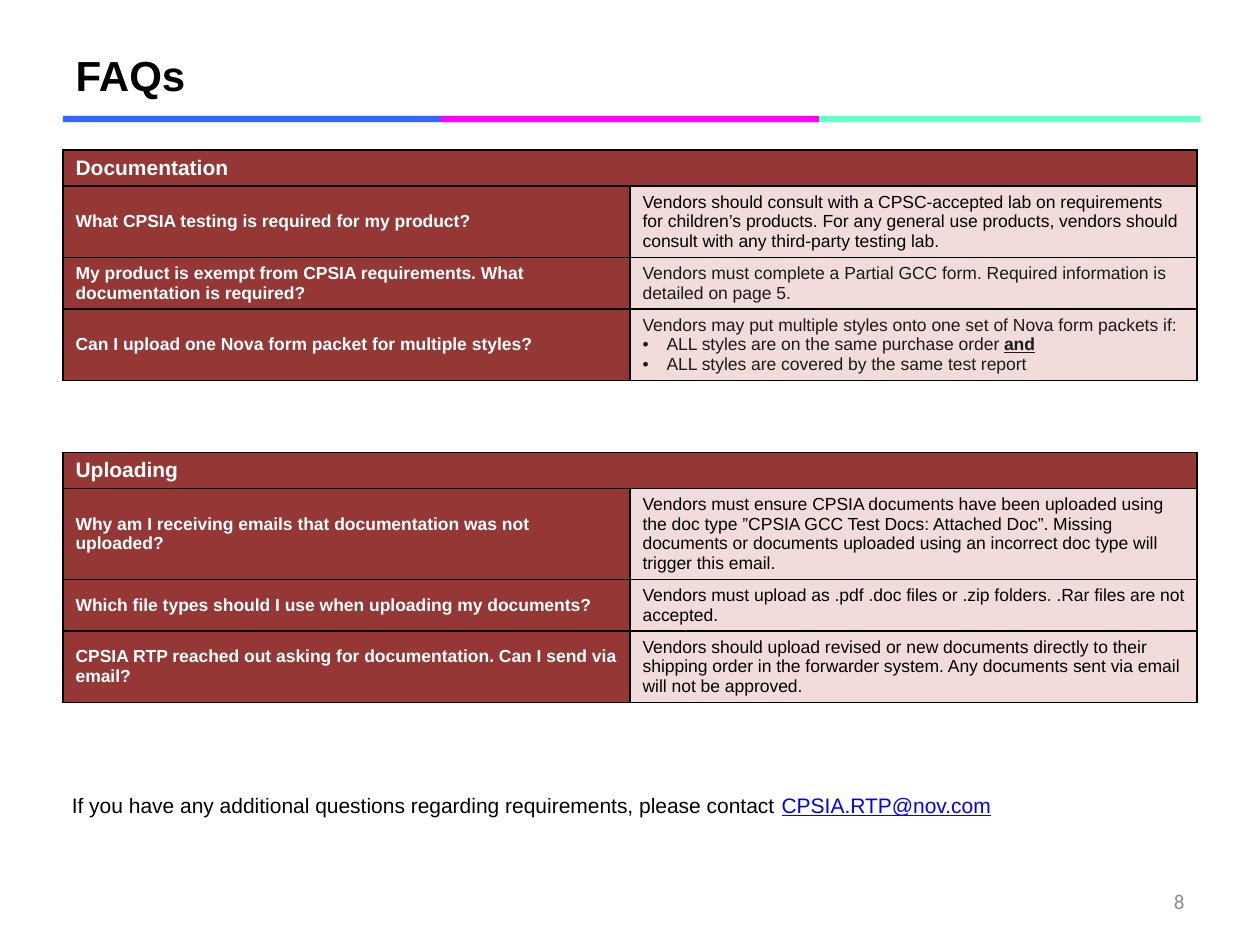
from lxml import etree
from pptx import Presentation
from pptx.dml.color import RGBColor
from pptx.enum.shapes import MSO_SHAPE
from pptx.enum.text import MSO_ANCHOR, MSO_AUTO_SIZE, PP_ALIGN
from pptx.oxml.ns import qn
from pptx.util import Inches, Pt

RECTANGLE = MSO_SHAPE.RECTANGLE
MIDDLE, TOP = MSO_ANCHOR.MIDDLE, MSO_ANCHOR.TOP
LEFT, RIGHT = PP_ALIGN.LEFT, PP_ALIGN.RIGHT
NO_AUTOFIT = MSO_AUTO_SIZE.NONE

BLACK = RGBColor(0x00, 0x00, 0x00)
WHITE = RGBColor(0xFF, 0xFF, 0xFF)
CHARCOAL = RGBColor(0x1A, 0x1A, 0x1A)
GREY = RGBColor(0x8C, 0x8C, 0x8C)
BLUE = RGBColor(0x33, 0x66, 0xFF)
MAGENTA = RGBColor(0xFF, 0x00, 0xFF)
MINT = RGBColor(0x66, 0xFF, 0xCC)
LINK_BLUE = RGBColor(0x00, 0x00, 0xFF)
MAROON = RGBColor(0x95, 0x37, 0x35)
BLUSH = RGBColor(0xF2, 0xDC, 0xDB)

MARGIN = 0.5
BULLET_INDENT = 0.19

DOCUMENTATION = [
    ("What CPSIA testing is required for my product?", BLACK, 0.56,
     ["Vendors should consult with a CPSC-accepted lab on requirements for children’s products. "
      "For any general use products, vendors should consult with any third-party testing lab."]),
    ("My product is exempt from CPSIA requirements. What documentation is required?", CHARCOAL, 0.41,
     ["Vendors must complete a Partial GCC form. Required information is detailed on page 5."]),
    ("Can I upload one Nova form packet for multiple styles?", CHARCOAL, 0.56,
     ["Vendors may put multiple styles onto one set of Nova form packets if:",
      "• ALL styles are on the same purchase order |and",
      "• ALL styles are covered by the same test report"]),
]
UPLOADING = [
    ("Why am I receiving emails that documentation was not uploaded?", BLACK, 0.71,
     ["Vendors must ensure CPSIA documents have been uploaded using the doc type "
      "”CPSIA GCC Test Docs: Attached Doc”. Missing documents or documents uploaded using "
      "an incorrect doc type will trigger this email."]),
    ("Which file types should I use when uploading my documents?", BLACK, 0.41,
     ["Vendors must upload as .pdf .doc files or .zip folders. .Rar files are not accepted."]),
    ("CPSIA RTP reached out asking for documentation. Can I send via email?", BLACK, 0.56,
     ["Vendors should upload revised or new documents directly to their shipping order in the "
      "forwarder system. Any documents sent via email will not be approved."]),
]


class FaqSlide:
    font = "Arial"
    header_height = 0.28
    column_width = 4.5

    def __init__(self, slide):
        self.slide = slide

    def run(self, paragraph, text, size, color, **formats):
        run = paragraph.add_run()
        run.text = text
        run.font.color.rgb = color
        values = {"name": self.font, "size": Pt(size), "bold": False, **formats}
        for attribute, value in values.items():
            setattr(run.font, attribute, value)

    def place(self, shape, left, top, width, height):
        for attribute, value in zip(("left", "top", "width", "height"), (left, top, width, height)):
            setattr(shape, attribute, Inches(value))

    def frame(self, shape, **formats):
        values = {"word_wrap": True, "auto_size": NO_AUTOFIT, **formats}
        for attribute, value in values.items():
            setattr(shape.text_frame, attribute, value)
        return shape.text_frame.paragraphs[0]

    def title(self, text):
        heading = self.slide.shapes.title
        self.place(heading, MARGIN, 0.29, 8.62, 0.61)
        paragraph = self.frame(heading, vertical_anchor=MIDDLE)
        paragraph.alignment = LEFT
        self.run(paragraph, text, 24, BLACK, bold=True)

    def bar(self, left, width, color):
        bar = self.slide.shapes.add_shape(
            RECTANGLE, Inches(left), Inches(0.92), Inches(width), Inches(0.05))
        bar.shadow.inherit = False
        bar.fill.solid()
        bar.fill.fore_color.rgb = color
        bar.line.fill.background()

    def contact(self, text, address):
        note = self.slide.placeholders[1]
        self.place(note, MARGIN, 6.01, 9, 1.09)
        paragraph = self.frame(note, vertical_anchor=TOP, margin_left=Inches(0.07),
                               margin_right=Inches(0.07), margin_top=Inches(0.28))
        paragraph.space_before = Pt(0)
        properties = paragraph._p.get_or_add_pPr()
        properties.set("marL", "0")
        properties.set("indent", "0")
        etree.SubElement(properties, qn("a:buNone"))
        self.run(paragraph, text, 12, BLACK)
        self.run(paragraph, address, 12, LINK_BLUE, underline=True)

    def page_number(self, number):
        box = self.slide.shapes.add_textbox(Inches(7.17), Inches(6.95), Inches(2.33), Inches(0.4))
        paragraph = self.frame(box, vertical_anchor=MIDDLE)
        paragraph.alignment = RIGHT
        self.run(paragraph, number, 12, GREY, name="Calibri")

    def style_cell(self, cell, color, anchor=MIDDLE):
        properties = cell._tc.get_or_add_tcPr()
        for side in ("lnL", "lnR", "lnT", "lnB"):
            border = etree.SubElement(properties, qn(f"a:{side}"), w=str(Pt(1)))
            fill = etree.SubElement(border, qn("a:solidFill"))
            etree.SubElement(fill, qn("a:srgbClr"), val=str(BLACK))
        cell.fill.solid()
        cell.fill.fore_color.rgb = color
        cell.vertical_anchor = anchor

    def answer(self, cell, lines, color):
        for index, line in enumerate(lines):
            frame = cell.text_frame
            paragraph = frame.add_paragraph() if index else frame.paragraphs[0]
            if line.startswith("• "):
                properties = paragraph._p.get_or_add_pPr()
                properties.set("marL", str(Inches(BULLET_INDENT)))
                properties.set("indent", str(-Inches(BULLET_INDENT)))
                etree.SubElement(properties, qn("a:buFont"), typeface=self.font)
                etree.SubElement(properties, qn("a:buChar"), char="•")
            plain, _, stressed = line.removeprefix("• ").partition("|")
            self.run(paragraph, plain, 10, color)
            if stressed:
                self.run(paragraph, stressed, 10, color, bold=True, underline=True)

    def faq_table(self, top, topic, entries):
        heights = [self.header_height] + [height for _, _, height, _ in entries]
        table = self.slide.shapes.add_table(
            len(heights), 2, Inches(MARGIN), Inches(top),
            Inches(2 * self.column_width), Inches(sum(heights))).table
        table.first_row = table.horz_banding = False
        for row, height in zip(table.rows, heights):
            row.height = Inches(height)
        header = table.cell(0, 0)
        header.merge(table.cell(0, 1))
        for cell in table.rows[0].cells:
            self.style_cell(cell, MAROON, TOP)
        self.run(header.text_frame.paragraphs[0], topic, 12, WHITE, bold=True)
        for index, (question, color, _, lines) in enumerate(entries, 1):
            asked, answered = table.cell(index, 0), table.cell(index, 1)
            self.style_cell(asked, MAROON)
            self.style_cell(answered, BLUSH)
            self.run(asked.text_frame.paragraphs[0], question, 10, WHITE, bold=True)
            self.answer(answered, lines, color)


def main():
    deck = Presentation()
    deck.slide_width, deck.slide_height = Inches(10), Inches(7.5)
    faq = FaqSlide(deck.slides.add_slide(deck.slide_layouts[1]))
    for left, width, color in ((0.5, 3, BLUE), (6.5, 3.03, MINT), (3.5, 3, MAGENTA)):
        faq.bar(left, width, color)
    faq.title("FAQs")
    faq.contact("If you have any additional questions regarding requirements, please contact ",
                "CPSIA.RTP@nov.com")
    faq.faq_table(1.19, "Documentation", DOCUMENTATION)
    faq.faq_table(3.59, "Uploading", UPLOADING)
    faq.page_number("8")
    deck.save("out.pptx")


if __name__ == "__main__":
    main()
